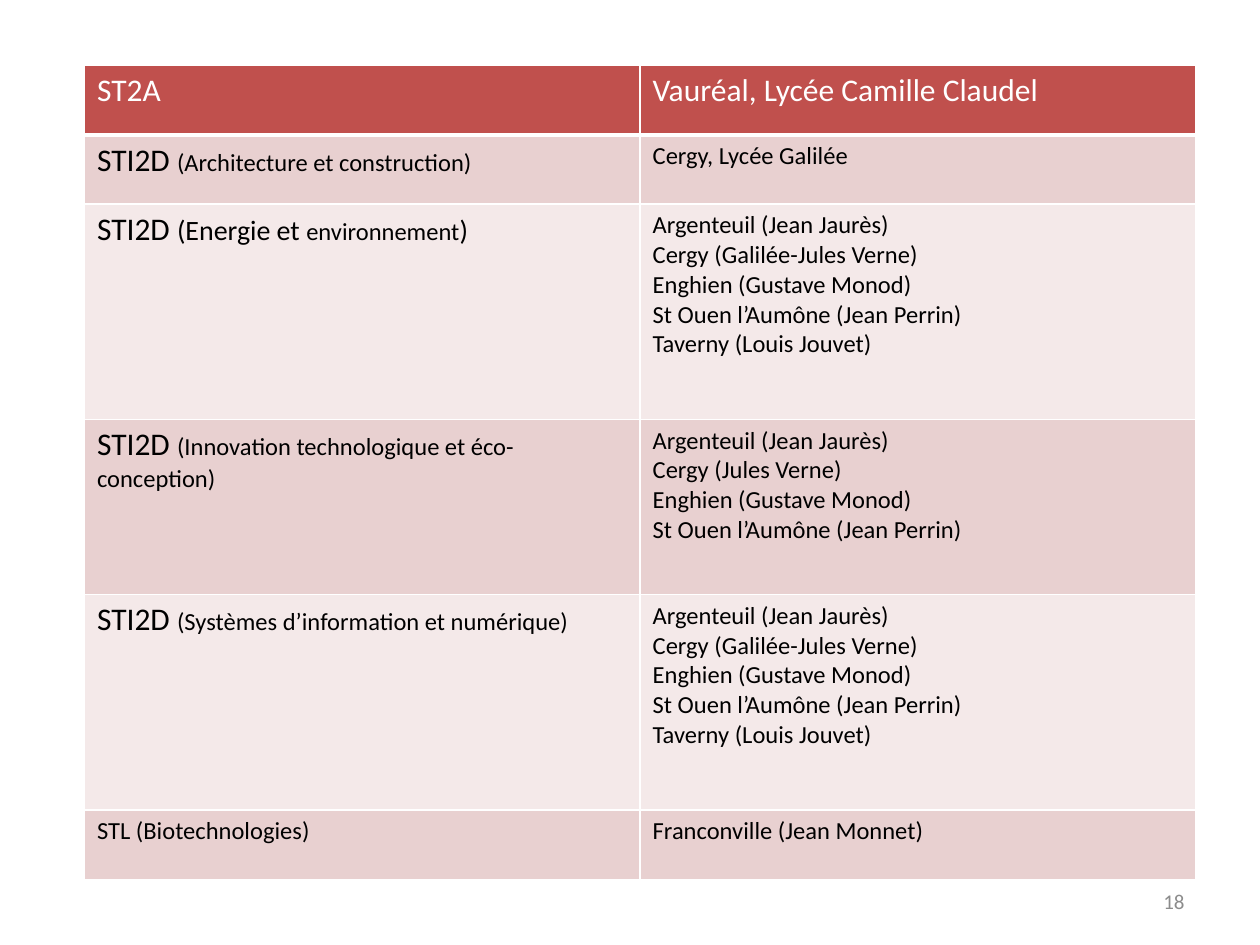
"""Build a slide listing technological streams and the schools offering them."""
import lxml.etree
import pptx
import pptx.dml.color
import pptx.enum.text
import pptx.oxml.ns
import pptx.util

Inches = pptx.util.Inches
FONT = "Calibri"
WHITE, BLACK, GREY = "FFFFFF", "000000", "8C8C8C"
HEADER_FILL = "C0504D"
BAND_FILLS = ("E8D0D0", "F4E9E9")
TABLE_LEFT, TABLE_TOP, COLUMN_WIDTH = 0.67, 0.52, 4.41
FIVE_SCHOOLS = [
    "Argenteuil (Jean Jaurès)",
    "Cergy (Galilée-Jules Verne)",
    "Enghien (Gustave Monod)",
    "St Ouen l’Aumône (Jean Perrin)",
    "Taverny (Louis Jouvet)",
]
FOUR_SCHOOLS = [
    "Argenteuil (Jean Jaurès)",
    "Cergy (Jules Verne)",
    "Enghien (Gustave Monod)",
    "St Ouen l’Aumône (Jean Perrin)",
]
STREAM = ("STI2D ", 18)
ROWS = [
    (0.55, [("ST2A", 18)], ["Vauréal, Lycée Camille Claudel"], 18),
    (0.55, [STREAM, ("(Architecture et construction)", 14)], ["Cergy, Lycée Galilée"], 14),
    (1.71, [STREAM, ("(Energie et ", 16), ("environnement", 14), (")", 16)], FIVE_SCHOOLS, 14),
    (1.39, [STREAM, ("(Innovation technologique et éco-conception)", 14)], FOUR_SCHOOLS, 14),
    (1.71, [STREAM, ("(Systèmes d’information et numérique)", 14)], FIVE_SCHOOLS, 14),
    (0.55, [("STL (Biotechnologies)", 14)], ["Franconville (Jean Monnet)"], 14),
]


def rgb(value):
    """Turn a hex string into a colour."""
    return pptx.dml.color.RGBColor.from_string(value)


def write(frame, paragraphs, color=BLACK, align=None):
    """Fill a text frame with paragraphs, each a list of (text, size) spans."""
    for index, spans in enumerate(paragraphs):
        para = frame.add_paragraph() if index else frame.paragraphs[0]
        para.alignment = align
        for text, size in spans:
            span = para.add_run()
            span.text = text
            span.font.name = FONT
            span.font.size = pptx.util.Pt(size)
            span.font.color.rgb = rgb(color)


def add_borders(cell, **widths):
    """Draw white borders on a cell, with widths in points by side."""
    qn = pptx.oxml.ns.qn
    properties = cell._tc.get_or_add_tcPr()
    for side in "LRTB":
        width = pptx.util.Pt(widths.get(side, 1))
        line = lxml.etree.SubElement(properties, qn(f"a:ln{side}"), w=str(width))
        fill = lxml.etree.SubElement(line, qn("a:solidFill"))
        lxml.etree.SubElement(fill, qn("a:srgbClr"), val=WHITE)


def add_schools_table(page):
    """Add the table of streams and schools."""
    height = sum(row[0] for row in ROWS)
    table = page.shapes.add_table(
        len(ROWS), 2, Inches(TABLE_LEFT), Inches(TABLE_TOP),
        Inches(2 * COLUMN_WIDTH), Inches(height),
    ).table
    table.first_row = table.horz_banding = False
    for column in table.columns:
        column.width = Inches(COLUMN_WIDTH)
    for index, (row_height, stream, schools, size) in enumerate(ROWS):
        table.rows[index].height = Inches(row_height)
        contents = [stream], [[(school, size)] for school in schools]
        for cell, paragraphs in zip(table.rows[index].cells, contents):
            add_borders(cell, T=3 if index == 1 else 1, B=3 if index == 0 else 1)
            cell.fill.solid()
            cell.fill.fore_color.rgb = rgb(BAND_FILLS[(index - 1) % 2] if index else HEADER_FILL)
            write(cell.text_frame, paragraphs, color=BLACK if index else WHITE)


def add_page_number(page):
    """Add the slide number at the bottom right."""
    box = page.shapes.add_textbox(Inches(7.17), Inches(6.95), Inches(2.33), Inches(0.4))
    box.text_frame.word_wrap = True
    box.text_frame.vertical_anchor = pptx.enum.text.MSO_ANCHOR.MIDDLE
    write(box.text_frame, [[("18", 12)]], color=GREY, align=pptx.enum.text.PP_ALIGN.RIGHT)


def main():
    """Build and save the deck."""
    deck = pptx.Presentation()
    deck.slide_width, deck.slide_height = Inches(10), Inches(7.5)
    page = deck.slides.add_slide(deck.slide_layouts[6])
    add_schools_table(page)
    add_page_number(page)
    deck.save("out.pptx")


if __name__ == "__main__":
    main()
